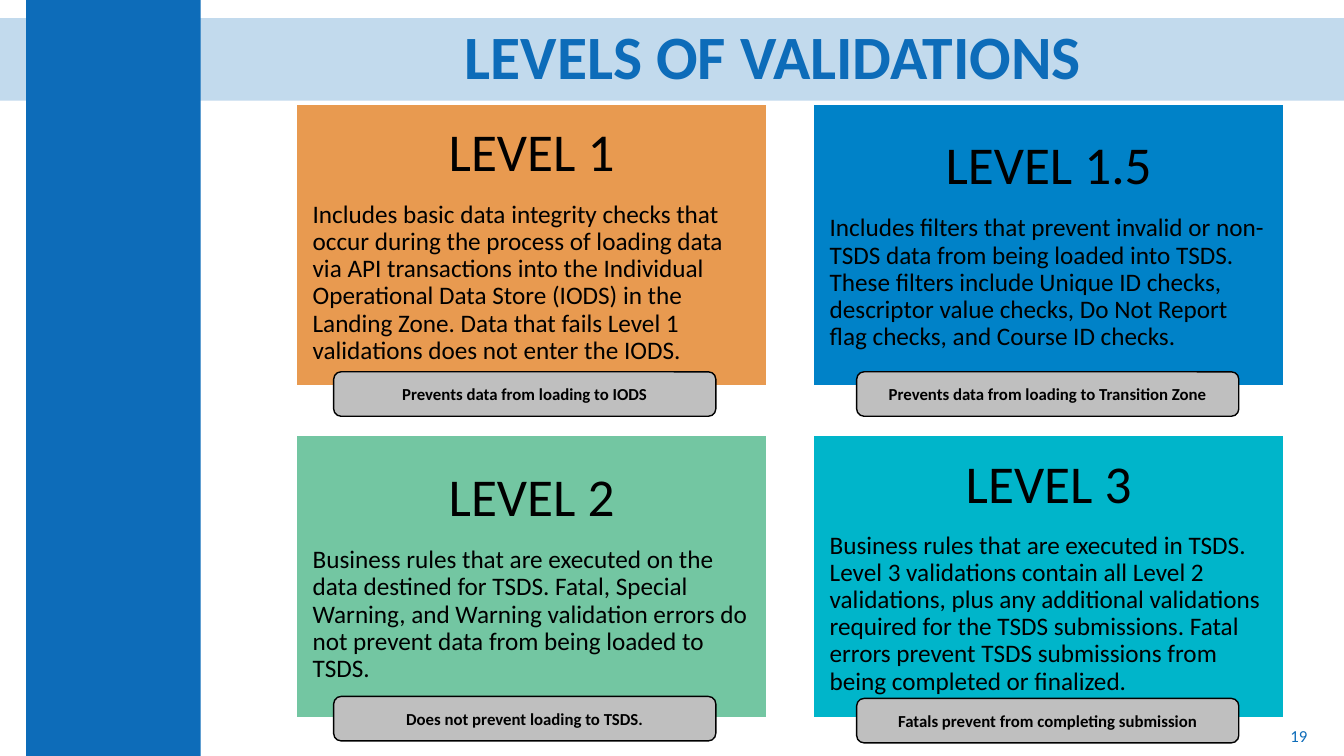
from lxml.etree import SubElement
from pptx import Presentation
from pptx.dml.color import RGBColor
from pptx.enum.shapes import MSO_SHAPE as SHAPE
from pptx.enum.text import MSO_ANCHOR as ANCHOR, PP_ALIGN as ALIGN
from pptx.oxml.ns import qn
from pptx.util import Cm, Pt

BLUE = "0D6CB9"
BLACK = "000000"


def add_block(kind, left, top, width, height, fill=None, line=None):
    block = slide.shapes.add_shape(kind, Cm(left), Cm(top), Cm(width), Cm(height))
    block.shadow.inherit = False
    if fill:
        block.fill.solid()
        block.fill.fore_color.rgb = RGBColor.from_string(fill)
    else:
        block.fill.background()
    if line:
        block.line.color.rgb = RGBColor.from_string(line)
        block.line.width = Pt(1)
    else:
        block.line.fill.background()
    block.text_frame.word_wrap = True
    block.text_frame.vertical_anchor = ANCHOR.MIDDLE
    return block


def write(paragraph, text, size, color=BLACK, bold=False, align=ALIGN.CENTER):
    paragraph.alignment = align
    run = paragraph.add_run()
    run.text = text
    run.font.name = "Calibri"
    run.font.size = Pt(size)
    run.font.bold = bold
    run.font.color.rgb = RGBColor.from_string(color)


deck = Presentation()
deck.slide_width, deck.slide_height = Cm(33.87), Cm(19.05)
slide = deck.slides.add_slide(deck.slide_layouts[6])

# Translucent title band and side bar
band = add_block(SHAPE.RECTANGLE, 0, 0.46, 33.87, 2.08, BLUE)
band_color = band.fill._xPr.find(qn("a:solidFill"))[0]
SubElement(band_color, qn("a:alpha"), val="25000")
add_block(SHAPE.RECTANGLE, 0.66, 0, 4.4, 19.05, BLUE)

# Title
title = add_block(SHAPE.RECTANGLE, 6.12, 0.46, 26.75, 2.08).text_frame.paragraphs[0]
title.line_spacing = 0.9
write(title, "LEVELS OF VALIDATIONS", 44, BLUE, bold=True)

# Level panels: name, fill, space after name, description, effect, effect top
levels = [
    ("LEVEL 1", "E89A50", 13.3,
     "Includes basic data integrity checks that occur during the process of loading "
     "data via API transactions into the Individual Operational Data Store (IODS) in "
     "the Landing Zone. Data that fails Level 1 validations does not enter the IODS.",
     "Prevents data from loading to IODS", 9.37),
    ("LEVEL 1.5", "0082C8", 13.3,
     "Includes filters that prevent invalid or non-TSDS data from being loaded into "
     "TSDS. These filters include Unique ID checks, descriptor value checks, Do Not "
     "Report flag checks, and Course ID checks.",
     "Prevents data from loading to Transition Zone", 9.37),
    ("LEVEL 2", "73C6A2", 13.3,
     "Business rules that are executed on the data destined for TSDS. Fatal, Special "
     "Warning, and Warning validation errors do not prevent data from being loaded "
     "to TSDS.",
     "Does not prevent loading to TSDS.", 17.55),
    ("LEVEL 3", "00B5CA", 12,
     "Business rules that are executed in TSDS. Level 3 validations contain all Level "
     "2 validations, plus any additional validations required for the TSDS "
     "submissions. Fatal errors prevent TSDS submissions from being completed or "
     "finalized.",
     "Fatals prevent from completing submission", 17.6),
]
for index, (name, color, gap, description, effect, effect_top) in enumerate(levels):
    row, column = divmod(index, 2)
    panel = add_block(SHAPE.RECTANGLE, 7.47 + 13.03 * column, 2.62 + 8.36 * row,
                      11.86, 7.11, color, "FFFFFF").text_frame
    panel.margin_left = panel.margin_right = Cm(0.41)
    panel.margin_top = panel.margin_bottom = Cm(0.41)
    heading, body = panel.paragraphs[0], panel.add_paragraph()
    heading.line_spacing = body.line_spacing = 0.9
    heading.space_after, body.space_after = Pt(gap), Pt(6.3)
    write(heading, name, 38)
    write(body, description, 18, align=ALIGN.LEFT)

    # Effect label over the panel's lower edge
    label = add_block(SHAPE.ROUNDED_RECTANGLE, 8.41 + 13.18 * column, effect_top,
                      9.63, 1.12, "BFBFBF", BLACK)
    write(label.text_frame.paragraphs[0], effect, 12, bold=True)

# Slide number
number = add_block(SHAPE.RECTANGLE, 25.58, 18.03, 7.62, 1.02)
write(number.text_frame.paragraphs[0], "19", 12, BLUE, align=ALIGN.RIGHT)

deck.save("out.pptx")
